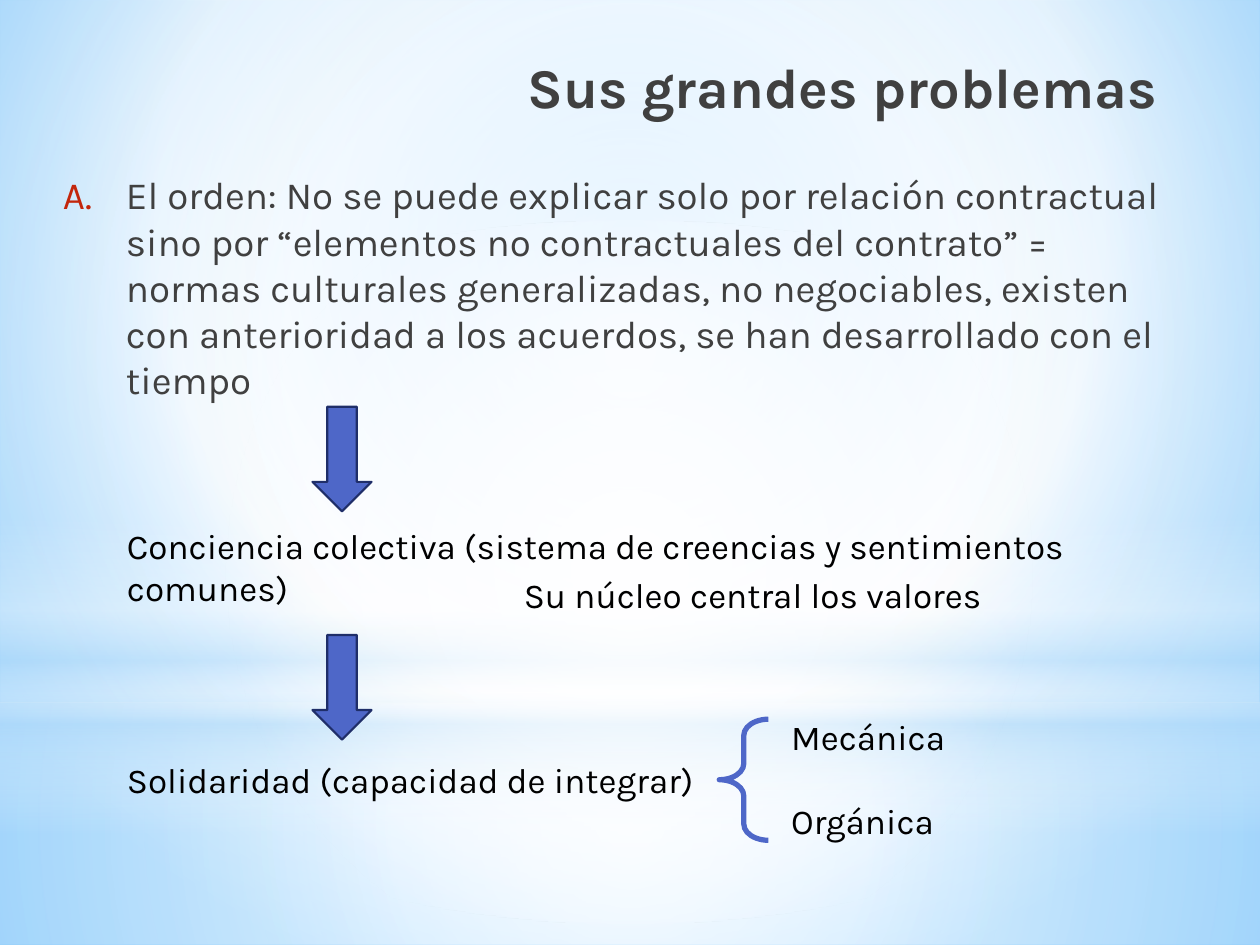
from pptx import Presentation
from pptx.dml.color import RGBColor
from pptx.enum.shapes import MSO_SHAPE as Kind
from pptx.enum.text import MSO_ANCHOR as Anchor, PP_ALIGN as Align
from pptx.oxml import parse_xml
from pptx.oxml.ns import nsdecls, qn
from pptx.util import Cm, Pt

FONT, INK, BLACK = "Karla", "404040", "000000"
BLUE, NAVY, RED = "4E67C8", "1F2E69", "C3260C"
WHITE, PALE = "FFFFFF", "B4DCFA"


def rgb(code):
    return RGBColor.from_string(code)


def shade(fill, root, stops, focus=None):
    """Give fill a gradient: stops of (place, colour, opacity), all in percent.

    It is radial around focus (left, top, right, bottom), else top to bottom.
    """
    marks = "".join(
        f'<a:gs pos="{place * 1000}"><a:srgbClr val="{code}">'
        f'<a:alpha val="{alpha * 1000}"/></a:srgbClr></a:gs>'
        for place, code, alpha in stops)
    if focus:
        sides = " ".join(f'{side}="{part * 1000}"' for side, part in zip("ltrb", focus))
        way = f'<a:path path="circle"><a:fillToRect {sides}/></a:path>'
    else:
        way = '<a:lin ang="5400000" scaled="0"/>'
    fill.gradient()
    old = root.find(".//" + qn("a:gradFill"))
    old.getparent().replace(old, parse_xml(
        f'<a:gradFill {nsdecls("a")} rotWithShape="1"><a:gsLst>{marks}</a:gsLst>{way}</a:gradFill>'))


class Page:
    def __init__(self, slide, font):
        self.slide, self.font = slide, font

    def fill_text(self, frame, lines, size, color, bold=False):
        frame.word_wrap = True
        frame.text = "\n".join(lines)
        for para in frame.paragraphs:
            for run in para.runs:
                face = run.font
                face.name, face.size, face.bold = self.font, Pt(size), bold
                face.color.rgb = rgb(color)

    def title(self, text, box):
        shape = self.slide.shapes.title
        shape.left, shape.top, shape.width, shape.height = map(Cm, box)
        self.fill_text(shape.text_frame, [text], 32, INK, True)
        shape.text_frame.vertical_anchor = Anchor.TOP
        shape.text_frame.paragraphs[0].alignment = Align.RIGHT
        self.slide.shapes._spTree.append(shape.element)  # in front of the backdrop

    def text(self, lines, box, size=20, color=BLACK, gap=0):
        frame = self.slide.shapes.add_textbox(*map(Cm, box)).text_frame
        self.fill_text(frame, lines, size, color)
        for para in frame.paragraphs[1:]:
            para.space_before = Pt(gap)
        return frame

    def list(self, lines, box):
        """Add a list lettered A., B., C."""
        for para in self.text(lines, box, 22, INK).paragraphs:
            para.space_after = Pt(3)
            props = para._p.get_or_add_pPr()
            props.set("marL", str(Cm(1.4)))
            props.set("indent", str(-Cm(1.27)))
            for mark in (f'<a:buClr {nsdecls("a")}><a:srgbClr val="{RED}"/></a:buClr>',
                         f'<a:buAutoNum {nsdecls("a")} type="alphaUcPeriod"/>'):
                props.append(parse_xml(mark))

    def shape(self, kind, box):
        shape = self.slide.shapes.add_shape(kind, *map(Cm, box))
        shape.shadow.inherit = False
        return shape

    def glow(self, kind, box, stops, focus=None):
        shape = self.shape(kind, box)
        shade(shape.fill, shape.element, stops, focus)
        shape.line.fill.background()

    def arrow(self, box):
        shape = self.shape(Kind.DOWN_ARROW, box)
        shape.fill.solid()
        shape.fill.fore_color.rgb = rgb(BLUE)
        shape.line.color.rgb = rgb(NAVY)
        shape.line.width = Pt(1.25)

    def brace(self, box):
        shape = self.shape(Kind.LEFT_BRACE, box)
        shape.adjustments[0] = 0.33
        shape.fill.background()
        shape.line.color.rgb = rgb(BLUE)
        shape.line.width = Pt(3)

    def backdrop(self):
        mid = (50, 50, 50, 50)
        shade(self.slide.background.fill, self.slide.element,
              [(0, "9ED5FF", 100), (60, WHITE, 100), (100, "5BB9FF", 100)], (20, 10, 20, 60))
        self.glow(Kind.RECTANGLE, (0, 14.17, 25.4, 4.88),
                  [(0, WHITE, 91), (37, WHITE, 76), (100, PALE, 79)], mid)
        self.glow(Kind.RECTANGLE, (0, 0, 25.4, 14.17),
                  [(0, WHITE, 89), (48, WHITE, 62), (100, PALE, 79)], mid)
        self.glow(Kind.RECTANGLE, (0, 10.46, 25.4, 6.35),
                  [(0, WHITE, 0), (29, WHITE, 30), (45, PALE, 40),
                   (55, WHITE, 26), (65, PALE, 60), (100, WHITE, 0)])
        self.glow(Kind.OVAL, (0, 4.45, 25.4, 14.17),
                  [(0, WHITE, 100), (56, WHITE, 0)], mid)


def main():
    deck = Presentation()
    deck.slide_width, deck.slide_height = Cm(25.4), Cm(19.05)
    page = Page(deck.slides.add_slide(deck.slide_layouts[5]), FONT)
    page.backdrop()
    page.title("Sus grandes problemas", (5.51, 0.94, 18.08, 3.18))
    page.list(["El orden: No se puede explicar solo por relación contractual sino por "
               "“elementos no contractuales del contrato” = normas culturales "
               "generalizadas, no negociables, existen con anterioridad a los acuerdos, "
               "se han desarrollado con el tiempo"], (0.89, 3.33, 23.01, 15.6))
    page.text(["Conciencia colectiva (sistema de creencias y sentimientos comunes)"],
              (2.31, 10.44, 19.99, 1.96))
    page.text(["Su núcleo central los valores"], (10.31, 11.43, 9.8, 1.12))
    page.text(["Solidaridad (capacidad de integrar)"], (2.31, 15.16, 11.99, 1.12))
    page.text(["Mecánica", "Orgánica"], (15.7, 14.3, 3.99, 2.82), gap=24)
    page.brace((14.5, 14.5, 0.99, 2.44))
    for top in (8.2, 12.8):
        page.arrow((6.3, top, 1.19, 2.11))
    deck.save("out.pptx")


if __name__ == "__main__":
    main()
